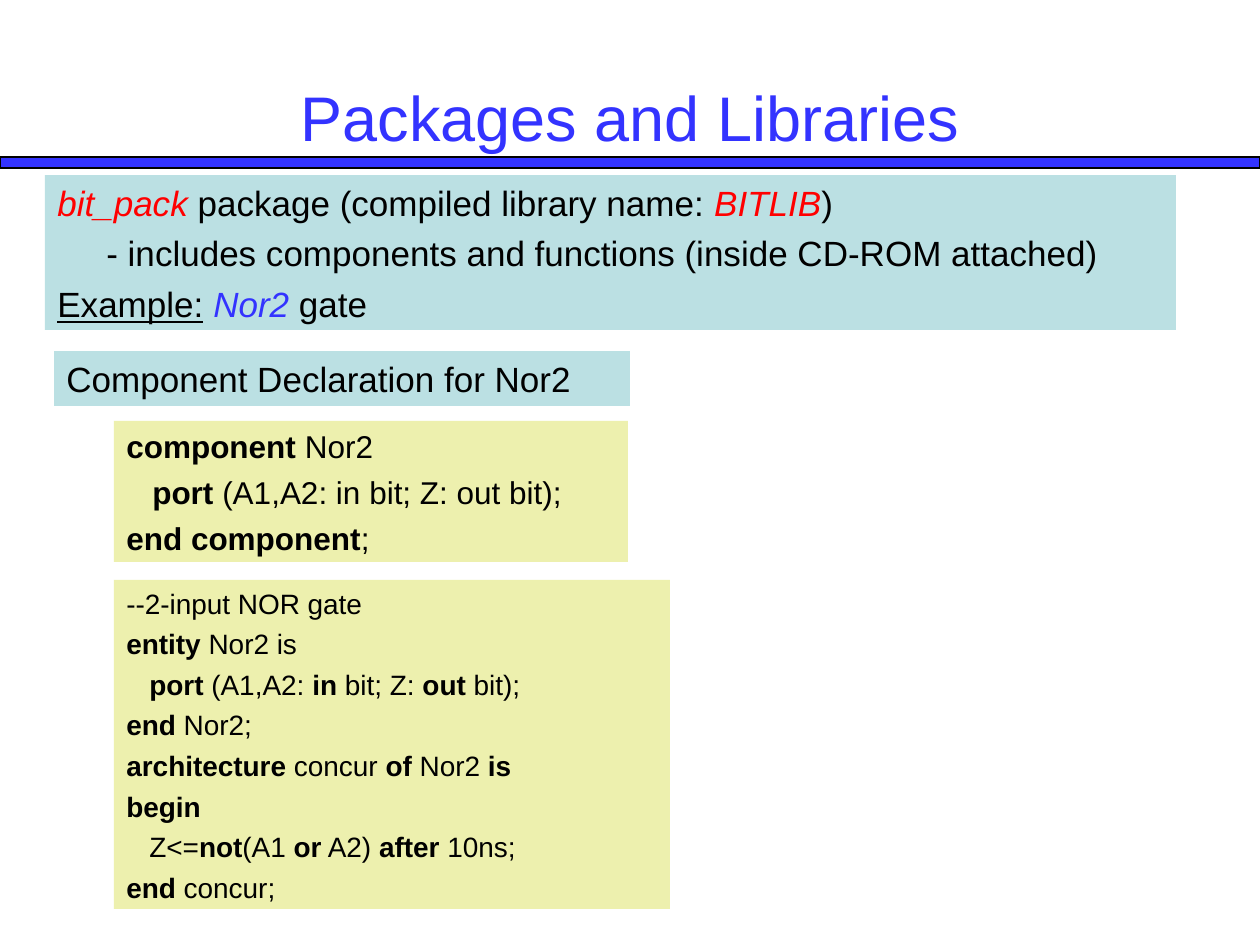
"""Build the Packages and Libraries slide."""
from pptx import Presentation
from pptx import util as u
from pptx.dml.color import RGBColor
from pptx.enum import shapes, text

BLUE, RED, BLACK = "3333FF", "FF0000", "000000"
TEAL, YELLOW = "BBE0E3", "EDF0AE"


def px(count):
    """Turn pixels into EMU."""
    return u.Emu(round(count * 914400 / 126))


def colour(code):
    """Turn a hex string into a colour."""
    return RGBColor.from_string(code)


class Slide:
    """Hold the style and the current page."""

    font = "Arial"

    def __init__(self, deck):
        """Add a title-only page to the deck."""
        self.page = deck.slides.add_slide(deck.slide_layouts[5])

    def add_span(self, para, words, size, style="", code=BLACK):
        """Add one run, with style letters b, i and u."""
        span = para.add_run()
        span.text = words
        span.font.name = self.font
        span.font.size = u.Pt(size)
        span.font.color.rgb = colour(code)
        span.font.bold = "b" in style
        span.font.italic = "i" in style
        span.font.underline = "u" in style

    def add_title(self, words, left, top, width, height):
        """Place the title and fill it."""
        box = self.page.shapes.title
        box.left, box.top, box.width, box.height = map(px, (left, top, width, height))
        frame = box.text_frame
        frame.auto_size = text.MSO_AUTO_SIZE.NONE
        frame.vertical_anchor = text.MSO_ANCHOR.MIDDLE
        para = frame.paragraphs[0]
        para.alignment = text.PP_ALIGN.CENTER
        self.add_span(para, words, 36, code=BLUE)

    def add_box(self, fill, left, top, width, height):
        """Add a plain filled rectangle."""
        box = self.page.shapes.add_shape(
            shapes.MSO_SHAPE.RECTANGLE, *map(px, (left, top, width, height)))
        box.shadow.inherit = False
        box.fill.solid()
        box.fill.fore_color.rgb = colour(fill)
        box.line.fill.background()
        return box

    def add_bar(self, left, top, width, height):
        """Add the outlined rule behind the title."""
        bar = self.add_box(BLUE, left, top, width, height)
        bar.line.color.rgb = colour(BLACK)
        bar.line.width = u.Pt(0.75)
        self.page.shapes.title.element.addprevious(bar.element)

    def add_panel(self, fill, place, size, lines, indent=0):
        """Add a filled box of lines, each an indent level and its spans."""
        frame = self.add_box(fill, *place).text_frame
        frame.word_wrap = True
        frame.vertical_anchor = text.MSO_ANCHOR.TOP
        for number, (level, *spans) in enumerate(lines):
            para = frame.add_paragraph() if number else frame.paragraphs[0]
            para.alignment = text.PP_ALIGN.LEFT
            para.space_before = u.Pt(size / 4)
            if level:
                para._p.get_or_add_pPr().set("marL", str(px(indent)))
            for words, *style in spans:
                self.add_span(para, words, size, *style)


def main():
    """Build and save the deck."""
    deck = Presentation()
    deck.slide_width, deck.slide_height = px(1260), px(945)
    slide = Slide(deck)
    slide.add_bar(0, 157, 1260, 11)
    slide.add_title("Packages and Libraries", 63, 38, 1134, 157)
    slide.add_panel(YELLOW, (114, 421, 514, 141), 18, [
        (0, ("component ", "b"), ("Nor2",)),
        (1, ("port", "b"), (" (A1,A2: in bit; Z: out bit);",)),
        (0, ("end component", "b"), (";",)),
    ], indent=26)
    slide.add_panel(YELLOW, (114, 580, 556, 329), 16, [
        (0, ("--2-input NOR gate",)),
        (0, ("entity", "b"), (" Nor2 is",)),
        (1, ("port", "b"), (" (A1,A2: ",), ("in", "b"), (" bit; Z: ",),
         ("out", "b"), (" bit);",)),
        (0, ("end", "b"), (" Nor2;",)),
        (0, ("architecture", "b"), (" concur ",), ("of", "b"), (" Nor2 ",), ("is", "b")),
        (0, ("begin", "b")),
        (1, ("Z<=",), ("not", "b"), ("(A1 ",), ("or", "b"), (" A2) ",),
         ("after", "b"), (" 10ns;",)),
        (0, ("end", "b"), (" concur;",)),
    ], indent=23)
    slide.add_panel(TEAL, (45, 175, 1131, 155), 20, [
        (0, ("bit_pack", "i", RED), (" package (compiled library name: ",),
         ("BITLIB", "i", RED), (")",)),
        (1, ("- includes components and functions (inside CD-ROM attached)",)),
        (0, ("Example:", "u"), (" ",), ("Nor2", "i", BLUE), (" gate",)),
    ], indent=49)
    slide.add_panel(TEAL, (54, 351, 576, 55), 20, [
        (0, ("Component Declaration for Nor2",)),
    ])
    deck.save("out.pptx")


if __name__ == "__main__":
    main()
